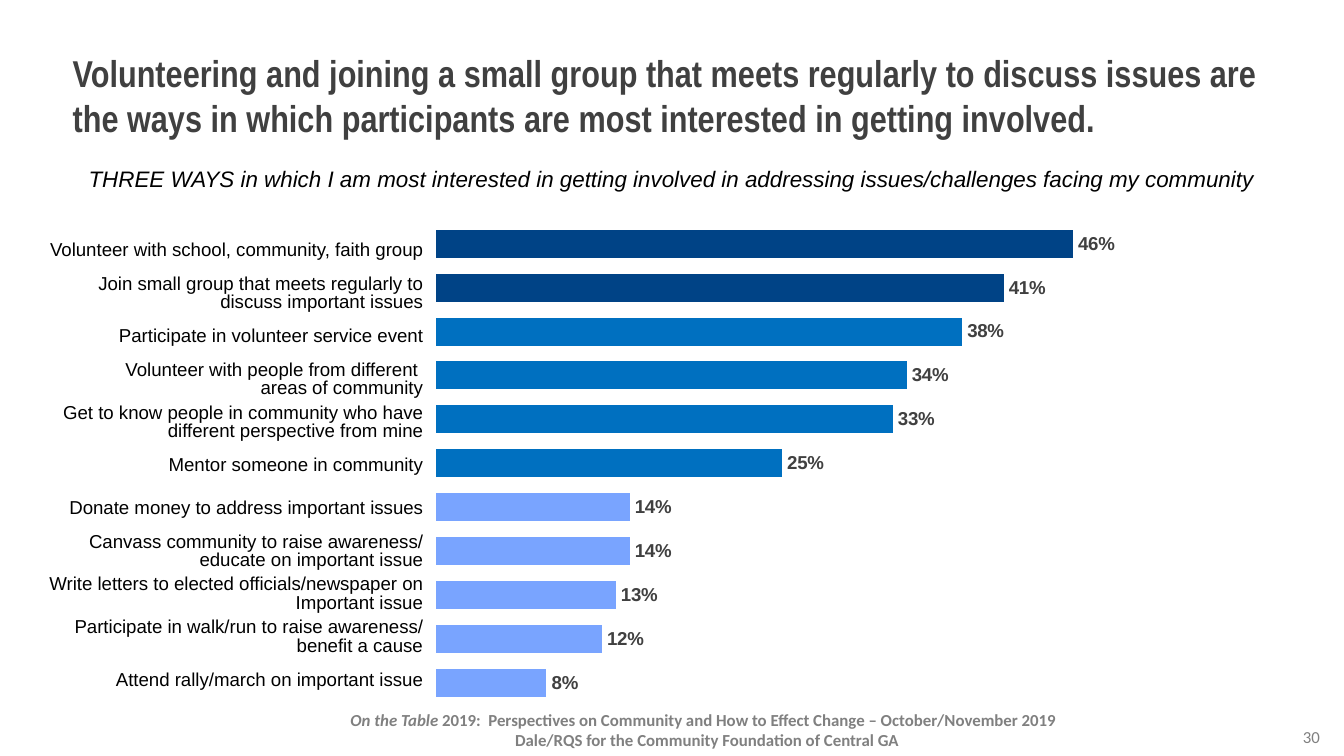
from lxml import etree
from pptx import Presentation
from pptx.chart.data import CategoryChartData
from pptx.dml.color import RGBColor
from pptx.enum.chart import XL_CHART_TYPE, XL_LABEL_POSITION
from pptx.enum.text import MSO_ANCHOR, MSO_AUTO_SIZE, PP_ALIGN
from pptx.oxml import parse_xml
from pptx.oxml.ns import nsdecls, qn
from pptx.util import Pt

LEFT, CENTER, RIGHT = PP_ALIGN.LEFT, PP_ALIGN.CENTER, PP_ALIGN.RIGHT
MIDDLE, TOP = MSO_ANCHOR.MIDDLE, MSO_ANCHOR.TOP
FIXED = MSO_AUTO_SIZE.NONE
BAR = XL_CHART_TYPE.BAR_CLUSTERED
OUTSIDE = XL_LABEL_POSITION.OUTSIDE_END
EMU_PER_PX = 4572
COLORS = {
    "white": "FFFFFF", "black": "000000", "dark": "404040", "gray": "808080",
    "navy": "004386", "blue": "0070C0", "light": "79A4FF",
}
ANSWERS = [
    ("Volunteer with school, community, faith group", 0.46, "navy"),
    ("Join small group that meets regularly to discuss important issues", 0.41, "navy"),
    ("Participate in volunteer service event", 0.38, "blue"),
    ("Volunteer with people from different \vareas of community", 0.34, "blue"),
    ("Get to know people in community who have different perspective from mine", 0.33, "blue"),
    ("Mentor someone in community", 0.25, "blue"),
    ("Donate money to address important issues", 0.14, "light"),
    ("Canvass community to raise awareness/\neducate on important issue", 0.14, "light"),
    ("Write letters to elected officials/newspaper on\nImportant issue", 0.13, "light"),
    ("Participate in walk/run to raise awareness/ benefit a cause", 0.12, "light"),
    ("Attend rally/march on important issue", 0.08, "light"),
]
INDENTED_ROW = 1


def px(value):
    return value * EMU_PER_PX


def color(name):
    return RGBColor.from_string(COLORS[name])


class SlideBuilder:
    def __init__(self, deck):
        self.page = deck.slides.add_slide(deck.slide_layouts[5])

    def style(self, font, face, size, ink, bold=False, italic=False):
        font.name, font.size = face, Pt(size)
        font.bold, font.italic = bold, italic
        font.color.rgb = color(ink)

    def fill_text(self, frame, text, align, *look, **flags):
        frame.text = text
        for para in frame.paragraphs:
            para.alignment = align
            for span in para.runs:
                self.style(span.font, *look, **flags)

    def title(self, area, text):
        box = self.page.shapes.title
        box.left, box.top, box.width, box.height = map(px, area)
        frame = box.text_frame
        frame.word_wrap, frame.auto_size = True, FIXED
        frame.vertical_anchor = MIDDLE
        self.fill_text(frame, text, LEFT, "Arial Narrow", 20, "dark", bold=True)

    def text(self, area, text, align, *look, wrap=True, anchor=TOP, **flags):
        frame = self.page.shapes.add_textbox(*map(px, area)).text_frame
        frame.word_wrap = wrap
        frame.vertical_anchor = anchor
        self.fill_text(frame, text, align, *look, **flags)
        return frame

    def footer(self, area, source, lines):
        frame = self.text(area, lines, CENTER, "Calibri", 9, "gray",
                          wrap=False, bold=True)
        para = frame.paragraphs[0]
        rest = para.runs[0].text
        para.runs[0].text = source
        para.runs[0].font.italic = True
        span = para.add_run()
        span.text = rest
        self.style(span.font, "Calibri", 9, "gray", bold=True)

    def bars(self, area, answers):
        data = CategoryChartData(number_format="0%")
        data.categories = [str(number + 1) for number in range(len(answers))]
        data.add_series("Series 1", [value for _, value, _ in answers])
        chart = self.page.shapes.add_chart(BAR, *map(px, area), data).chart
        chart.has_legend = chart.has_title = False
        self.style(chart.font, "Arial", 10, "black")
        axis = chart.value_axis
        axis.minimum_scale, axis.maximum_scale = 0, 0.6
        axis.has_major_gridlines = False
        axis.visible = chart.category_axis.visible = False
        plot = chart.plots[0]
        plot.gap_width, plot.vary_by_categories = 57, False
        series = plot.series[0]
        series.format.fill.solid()
        series.format.fill.fore_color.rgb = color("navy")
        for index, (_, _, shade) in enumerate(answers):
            if shade != "navy":
                fill = series.points[index].format.fill
                fill.solid()
                fill.fore_color.rgb = color(shade)
        labels = series.data_labels
        labels.show_value, labels.position = True, OUTSIDE
        labels.number_format, labels.number_format_is_linked = "0%", False
        self.style(labels.font, "Arial", 10, "dark", bold=True)
        self.place_plot(chart, x=0.024, y=0.04, w=0.953, h=0.949)

    def place_plot(self, chart, **shares):
        modes = '<c:layoutTarget val="inner"/><c:xMode val="edge"/><c:yMode val="edge"/>'
        sizes = "".join(f'<c:{key} val="{share}"/>' for key, share in shares.items())
        area = chart.plots[0]._element.getparent()
        for old in area.findall(qn("c:layout")):
            area.remove(old)
        area.insert(0, parse_xml(
            f'<c:layout {nsdecls("c")}><c:manualLayout>{modes}{sizes}'
            "</c:manualLayout></c:layout>"))

    def label_table(self, area, labels):
        table = self.page.shapes.add_table(len(labels), 1, *map(px, area)).table
        table.first_row = table.horz_banding = False
        for row, label in zip(table.rows, labels):
            row.height = px(area[3] // len(labels))
            cell = row.cells[0]
            cell.margin_left = cell.margin_right = px(14)
            cell.margin_top = cell.margin_bottom = 0
            cell.vertical_anchor = MIDDLE
            self.fill_text(cell.text_frame, label, RIGHT, "Arial", 10, "black")
            for para in cell.text_frame.paragraphs:
                para.line_spacing = Pt(10)
            self.borders(cell)
            cell.fill.background()
        para = table.cell(INDENTED_ROW, 0).text_frame.paragraphs[0]
        para._p.get_or_add_pPr().set("marL", str(px(50)))

    def borders(self, cell):
        props = cell._tc.get_or_add_tcPr()
        for side in ("lnL", "lnR", "lnT", "lnB"):
            line = etree.SubElement(props, qn(f"a:{side}"), w=str(Pt(1)))
            fill = etree.SubElement(line, qn("a:solidFill"))
            etree.SubElement(fill, qn("a:srgbClr"), val=COLORS["white"])


def main():
    deck = Presentation()
    deck.slide_width, deck.slide_height = px(2000), px(1125)
    slide = SlideBuilder(deck)
    slide.footer(
        (493, 1046, 1112, 80), "On the Table",
        " 2019:  Perspectives on Community and How to Effect Change – October/November 2019 \n"
        " Dale/RQS for the Community Foundation of Central GA")
    slide.title(
        (88, 47, 1828, 188),
        "Volunteering and joining a small group that meets regularly to discuss issues are "
        "the ways in which participants are most interested in getting involved.")
    slide.bars((617, 300, 1298, 757), ANSWERS[::-1])
    slide.text((1856, 1072, 128, 50), "30", RIGHT, "Calibri", 9, "gray", anchor=MIDDLE)
    slide.text(
        (78, 236, 1844, 60),
        "THREE WAYS in which I am most interested in getting involved in addressing "
        "issues/challenges facing my community",
        CENTER, "Arial", 12, "black", italic=True)
    slide.label_table((31, 342, 612, 704), [label for label, _, _ in ANSWERS])
    deck.save("out.pptx")


if __name__ == "__main__":
    main()
